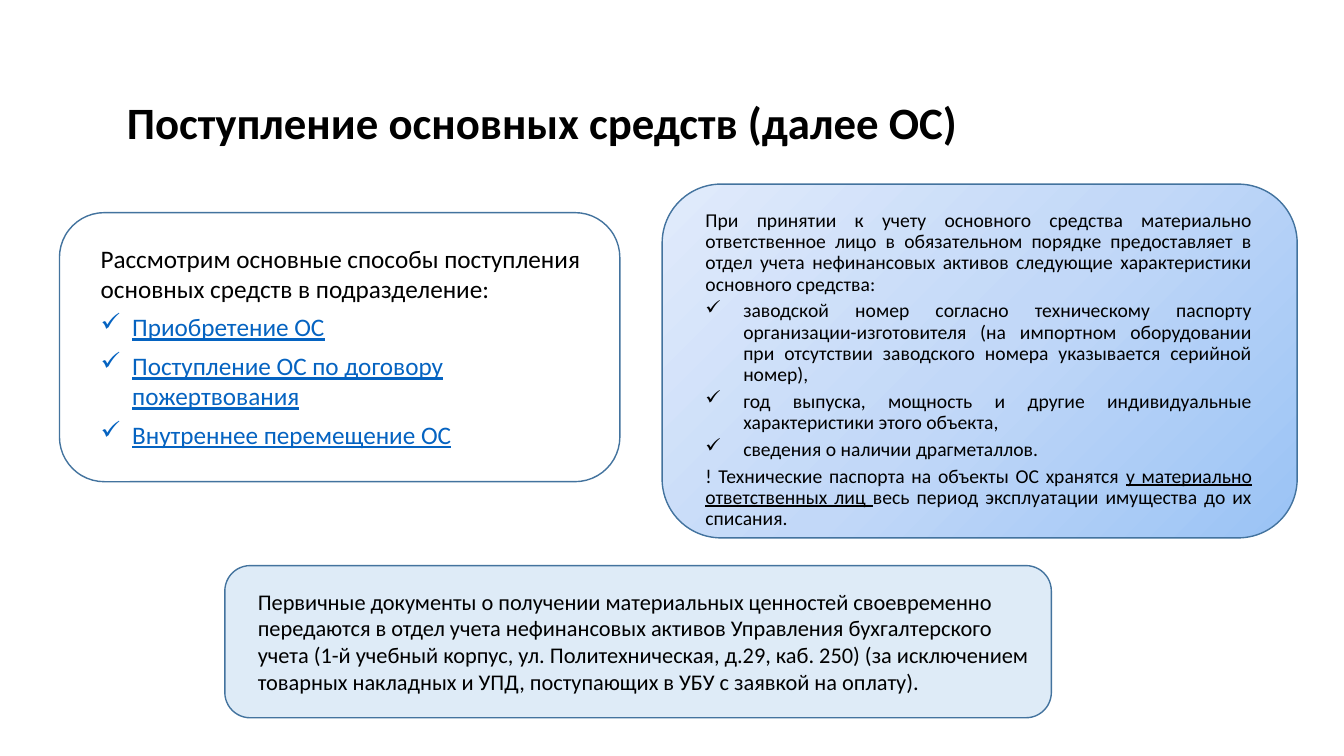
import copy
from dataclasses import dataclass

import pptx
import pptx.dml.color
import pptx.enum.shapes
import pptx.enum.text
import pptx.oxml
import pptx.oxml.ns
import pptx.util

Pt = pptx.util.Pt
FONT = "Calibri"
BLACK = "000000"
LINK = "0563C1"
OUTLINE = "43739E"


@dataclass
class Card:
    left: float
    top: float
    width: float
    height: float
    colors: tuple[str, ...] = ()


@dataclass
class Span:
    text: str
    color: str = BLACK
    underline: bool = False
    bold: bool = False


@dataclass
class Para:
    spans: list[Span]
    bullet: bool = False


@dataclass
class TextBlock:
    left: float
    top: float
    width: float
    height: float
    size: float
    paras: list[Para]
    after: float = 0
    line: float = 1
    indent: float = 0
    justified: bool = False


def rgb(value: str) -> pptx.dml.color.RGBColor:
    return pptx.dml.color.RGBColor.from_string(value)


def bounds(item: Card | TextBlock) -> list[int]:
    return [Pt(length) for length in (item.left, item.top, item.width, item.height)]


def fill_gradient(shape, colors: tuple[str, ...]) -> None:
    shape.fill.gradient()
    shape.fill.gradient_angle = 135
    stop_list = next(shape._element.iter(pptx.oxml.ns.qn("a:gsLst")))
    while len(stop_list) < len(colors):
        stop_list.append(copy.deepcopy(stop_list[0]))
    for index, (stop, color) in enumerate(zip(shape.fill.gradient_stops, colors)):
        stop.color.rgb = rgb(color)
        stop.position = index / (len(colors) - 1)


def draw_card(page, card: Card) -> None:
    kind = pptx.enum.shapes.MSO_SHAPE.ROUNDED_RECTANGLE
    shape = page.shapes.add_shape(kind, *bounds(card))
    shape.shadow.inherit = False
    shape.line.color.rgb = rgb(OUTLINE)
    shape.line.width = Pt(1)
    if len(card.colors) > 1:
        fill_gradient(shape, card.colors)
    elif card.colors:
        shape.fill.solid()
        shape.fill.fore_color.rgb = rgb(card.colors[0])
    else:
        shape.fill.background()


def add_check(para, indent: float) -> None:
    properties = para._p.get_or_add_pPr()
    properties.set("marL", str(Pt(indent)))
    properties.set("indent", str(-Pt(indent)))
    mark = pptx.oxml.parse_xml(f'<a:buChar {pptx.oxml.ns.nsdecls("a")} char="✓"/>')
    properties.append(mark)


def draw_text(page, block: TextBlock):
    box = page.shapes.add_textbox(*bounds(block))
    frame = box.text_frame
    frame.word_wrap = True
    frame.auto_size = pptx.enum.text.MSO_AUTO_SIZE.SHAPE_TO_FIT_TEXT
    for index, item in enumerate(block.paras):
        para = frame.add_paragraph() if index else frame.paragraphs[0]
        para.line_spacing = block.line
        para.space_after = Pt(block.after)
        if block.justified:
            para.alignment = pptx.enum.text.PP_ALIGN.JUSTIFY
        if item.bullet:
            add_check(para, block.indent)
        for span in item.spans:
            run = para.add_run()
            run.text = span.text
            run.font.name = FONT
            run.font.size = Pt(block.size)
            run.font.bold = span.bold
            run.font.underline = span.underline
            run.font.color.rgb = rgb(span.color)
    return box


def draw_title(page, block: TextBlock) -> None:
    box = draw_text(page, block)
    box.text_frame.auto_size = pptx.enum.text.MSO_AUTO_SIZE.NONE
    box.text_frame.vertical_anchor = pptx.enum.text.MSO_ANCHOR.MIDDLE
    box.fill.solid()
    box.fill.fore_color.rgb = rgb("FFFFFF")


TITLE = TextBlock(83.5, 38.2, 615.6, 104.4, 32, [
    Para([Span("Поступление основных средств (далее ОС)", bold=True)]),
], line=0.8)

CARDS = [
    Card(473, 131.5, 453.6, 252.7, ("9AC3F5", "C2D8F8", "E1EBFB")),
    Card(160.6, 404, 590.4, 108.7, ("DEEBF7",)),
    Card(42.5, 151.9, 400.3, 192.2),
]

DOCUMENTS = TextBlock(177.1, 416.2, 566.6, 85, 16, [
    Para([Span(
        "Первичные документы о получении материальных ценностей своевременно передаются "
        "в отдел учета нефинансовых активов Управления бухгалтерского учета "
        "(1-й учебный корпус, ул. Политехническая, д.29, каб. 250) (за исключением "
        "товарных накладных и УПД, поступающих в УБУ с заявкой на оплату)."
    )]),
])

METHODS = ["Приобретение ОС", "Поступление ОС по договору пожертвования", "Внутреннее перемещение ОС"]
WAYS = TextBlock(64.8, 169.9, 366.5, 180.7, 18, [
    Para([Span("Рассмотрим основные способы поступления основных средств в подразделение:")]),
    *[Para([Span(method, LINK, underline=True)], bullet=True) for method in METHODS],
], after=6, indent=22.5)

DETAILS = [
    "заводской номер согласно техническому паспорту организации-изготовителя "
    "(на импортном оборудовании при отсутствии заводского номера указывается серийной номер),",
    "год выпуска, мощность и другие индивидуальные характеристики этого объекта, ",
    "сведения о наличии драгметаллов.",
]
REQUIREMENTS = TextBlock(496.8, 146.9, 404.6, 236.9, 14, [
    Para([Span(
        "При принятии к учету основного средства материально ответственное лицо "
        "в обязательном порядке предоставляет в отдел учета нефинансовых активов "
        "следующие характеристики основного средства: "
    )]),
    *[Para([Span(detail)], bullet=True) for detail in DETAILS],
    Para([
        Span("! Технические паспорта на объекты ОС хранятся "),
        Span("у материально ответственных лиц ", underline=True),
        Span("весь период эксплуатации имущества до их списания."),
    ]),
], after=4, line=0.9, indent=27, justified=True)


def main() -> None:
    deck = pptx.Presentation()
    deck.slide_width, deck.slide_height = Pt(960), Pt(540)
    page = deck.slides.add_slide(deck.slide_layouts[6])
    draw_title(page, TITLE)
    for card in CARDS:
        draw_card(page, card)
    for block in (DOCUMENTS, WAYS, REQUIREMENTS):
        draw_text(page, block)
    deck.save("out.pptx")


if __name__ == "__main__":
    main()
